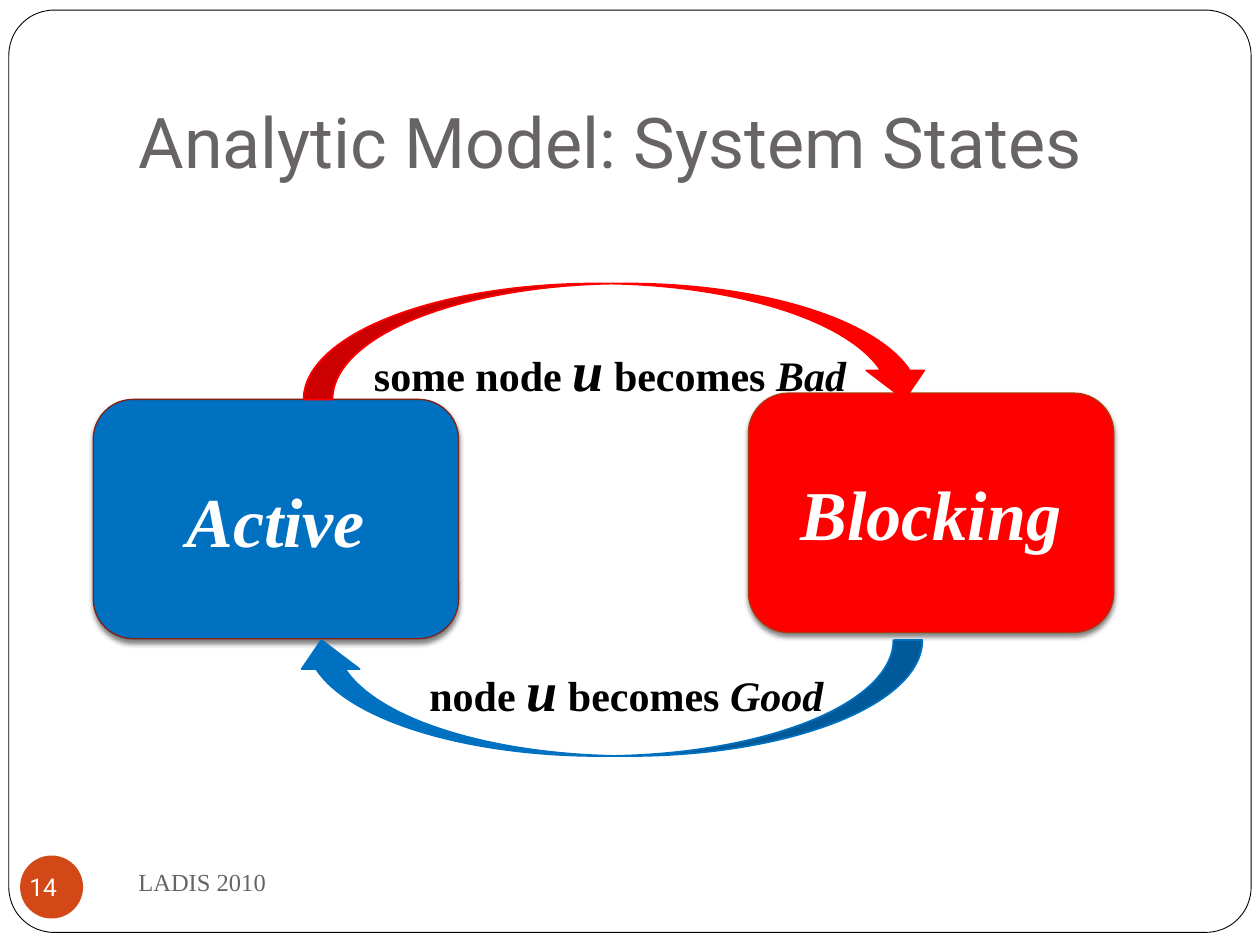
from lxml.etree import SubElement
from pptx import Presentation
from pptx.dml.color import RGBColor
from pptx.enum.shapes import MSO_SHAPE as Preset
from pptx.enum.text import MSO_ANCHOR as Anchor, MSO_AUTO_SIZE as AutoSize, PP_ALIGN as Align
from pptx.oxml.ns import qn
from pptx.util import Inches, Pt

presentation = Presentation()
presentation.slide_width, presentation.slide_height = Inches(10), Inches(7.5)
slide = presentation.slides.add_slide(presentation.slide_layouts[5])
shapes = slide.shapes

# Square grid: 10 columns by 7.5 rows
COLUMN = presentation.slide_width / 10
ROW = presentation.slide_height / 7.5
SERIF, SANS = "Times New Roman", "Roboto"
GREY, WHITE, BLUE, RED = "696464", "FFFFFF", "0070C0", "FF0000"


def grid(left, top, width, height):
    return [round(n * unit) for n, unit in zip((left, top, width, height), (COLUMN, ROW) * 2)]


def paint(target, color, line=None, line_width=None):
    """Color a font, or fill and outline a shape."""
    if hasattr(target, "fill") and not hasattr(target, "bold"):
        target.shadow.inherit = False
        target.fill.solid()
        target.fill.fore_color.rgb = RGBColor.from_string(color)
        if line:
            target.line.color.rgb = RGBColor.from_string(line)
            target.line.width = Pt(line_width)
        else:
            target.line.fill.background()
    else:
        target.color.rgb = RGBColor.from_string(color)


# Frame, behind everything else
frame = shapes.add_shape(Preset.ROUNDED_RECTANGLE, *grid(0.07, 0.08, 9.86, 7.32))
frame.adjustments[0] = 0.049
paint(frame, WHITE, "000000", 0.5)
shapes.title._element.addprevious(frame._element)

# Title
title = shapes.title
title.left, title.top, title.width, title.height = grid(1, 0.3, 8.5, 1.25)
title.text_frame.text = "Analytic Model: System States"
title.text_frame.auto_size = AutoSize.NONE
title.text_frame.vertical_anchor = Anchor.BOTTOM
title.text_frame.margin_bottom = Inches(0.1)
title.text_frame.paragraphs[0].alignment = Align.LEFT
title_font = title.text_frame.paragraphs[0].runs[0].font
title_font.name, title_font.size = SANS, Pt(40)
paint(title_font, GREY)

# Slide number
badge = shapes.add_shape(Preset.OVAL, *grid(0.16, 6.79, 0.5, 0.5))
paint(badge, "D34817")
frame_text = badge.text_frame
frame_text.text = "14"
frame_text.word_wrap = False
frame_text.margin_left = frame_text.margin_right = 0
frame_text.margin_top = frame_text.margin_bottom = 0
badge_font = frame_text.paragraphs[0].runs[0].font
badge_font.name, badge_font.size = SANS, Pt(14)
paint(badge_font, WHITE)

# States, with a soft shadow below
for name, left, top, color, line in (
    ("Active", 0.74, 3.17, BLUE, "812014"),
    ("Blocking", 5.94, 3.12, RED, "B1360B"),
):
    state = shapes.add_shape(Preset.ROUNDED_RECTANGLE, *grid(left, top, 2.9, 1.9))
    paint(state, color, line, 0.75)
    effects = state._element.spPr.find(qn("a:effectLst"))
    shadow = SubElement(effects, qn("a:outerShdw"), blurRad=str(Pt(3)), dist=str(Pt(2)),
                        dir="5400000", rotWithShape="0")
    black = SubElement(shadow, qn("a:srgbClr"), val="000000")
    SubElement(black, qn("a:alpha"), val="50000")
    state.text_frame.text = name
    state.text_frame.vertical_anchor = Anchor.MIDDLE
    state.text_frame.paragraphs[0].alignment = Align.CENTER
    font = state.text_frame.paragraphs[0].runs[0].font
    font.name, font.size, font.bold, font.italic = SERIF, Pt(40), True, True
    paint(font, WHITE)

# Transitions
for left, top, rotation, color in ((2.41, 2.25, 0, RED), (2.32, 5.08, 180, BLUE)):
    arrow = shapes.add_shape(Preset.CURVED_DOWN_ARROW, *grid(left, top, 5, 0.92))
    arrow.rotation = rotation
    paint(arrow, color, color, 1)

# Transition labels: text, size, italic
for left, top, start, outcome in (
    (2.87, 2.61, "some node ", "Bad"),
    (3.31, 5.15, "node ", "Good"),
):
    label = shapes.add_textbox(*grid(left, top, 4.13, 0.49))
    label.text_frame.word_wrap = True
    paragraph = label.text_frame.paragraphs[0]
    for text, size, italic in (
        (start, 24, False), ("u", 32, True), (" ", 24, True),
        ("becomes ", 24, False), (outcome, 24, True),
    ):
        run = paragraph.add_run()
        run.text = text
        font = run.font
        font.name, font.size, font.bold, font.italic = SERIF, Pt(size), True, italic
        paint(font, "000000")

# Footer
footer = shapes.add_textbox(*grid(1, 6.75, 4.33, 0.5))
footer.text_frame.word_wrap = True
footer.text_frame.vertical_anchor = Anchor.MIDDLE
footer.text_frame.text = "LADIS 2010"
footer_font = footer.text_frame.paragraphs[0].runs[0].font
footer_font.name, footer_font.size = SERIF, Pt(14)
paint(footer_font, GREY)

presentation.save("out.pptx")
